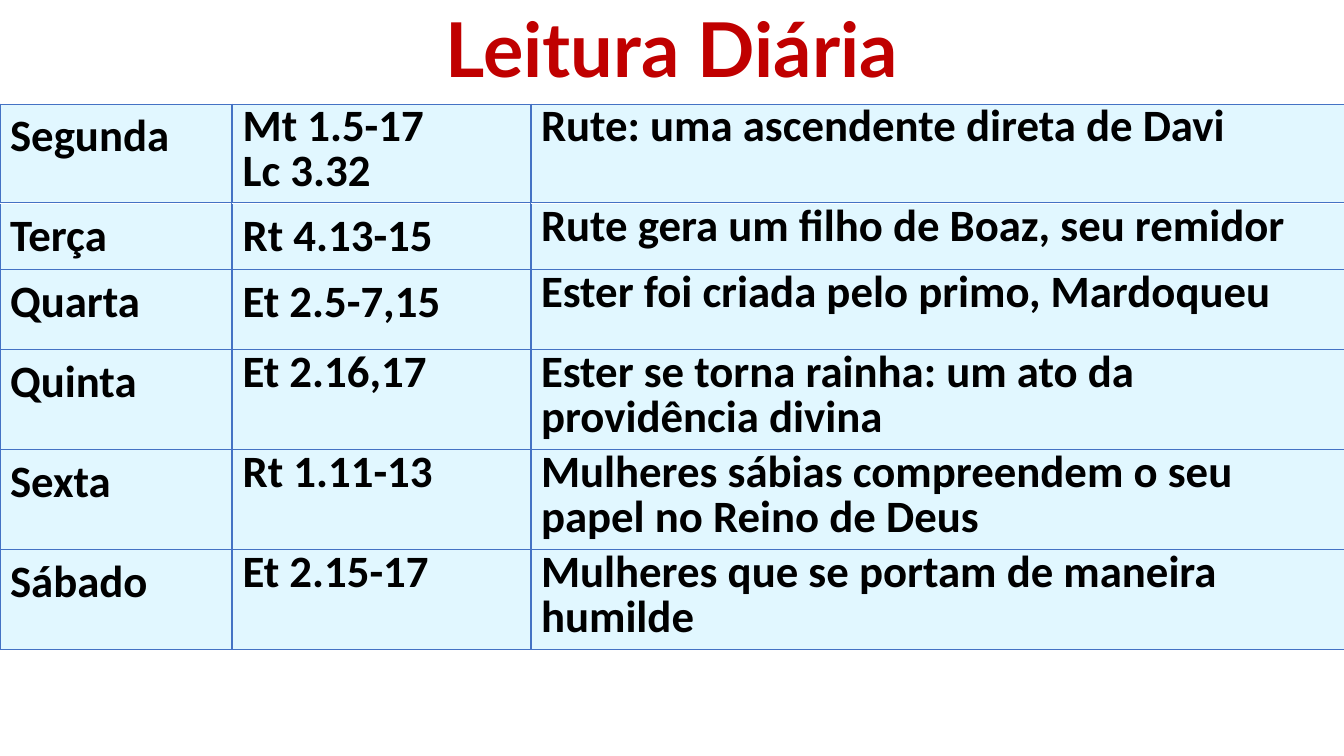
from dataclasses import dataclass

from lxml.etree import SubElement
from pptx import Presentation
from pptx.dml.color import RGBColor
from pptx.enum.shapes import MSO_CONNECTOR
from pptx.enum.text import MSO_ANCHOR, PP_ALIGN
from pptx.oxml.ns import qn
from pptx.util import Cm, Pt

WHITE, BLACK, RED = "FFFFFF", "000000", "C00000"
BLUE, PALE_BLUE = "4472C4", "E1F7FF"
SLIDE_WIDTH, SLIDE_HEIGHT = 33.87, 19.05
TABLE_TOP = 2.62
COLUMN_WIDTHS = (5.86, 7.52, 20.49)


@dataclass
class Reading:
    day: str
    passage: str
    theme: str
    height: float
    tight_passage: bool = True  # passage set with 32 pt line spacing


@dataclass
class Rule:
    x1: float
    y1: float
    x2: float
    y2: float


READINGS = [
    Reading("Segunda", "Mt 1.5-17\nLc 3.32", "Rute: uma ascendente direta de Davi", 2.5),
    Reading("Terça", "Rt 4.13-15", "Rute gera um filho de Boaz, seu remidor", 1.66, False),
    Reading("Quarta", "Et 2.5-7,15", "Ester foi criada pelo primo, Mardoqueu", 2.02, False),
    Reading("Quinta", "Et 2.16,17", "Ester se torna rainha: um ato da providência divina", 2.52),
    Reading("Sexta", "Rt 1.11-13", "Mulheres sábias compreendem o seu papel no Reino de Deus", 2.52),
    Reading("Sábado", "Et 2.15-17", "Mulheres que se portam de maneira humilde", 2.52),
]
TABLE_HEIGHT = sum(reading.height for reading in READINGS)


def rgb(color: str) -> RGBColor:
    return RGBColor.from_string(color)


def style_text(frame, font: str, size: float, color: str) -> None:
    for paragraph in frame.paragraphs:
        for run in paragraph.runs:
            run.font.name = font
            run.font.size = Pt(size)
            run.font.bold = True
            run.font.color.rgb = rgb(color)


def add_title(slide, text: str) -> None:
    title = slide.shapes.add_textbox(Cm(0), Cm(0.1), Cm(SLIDE_WIDTH), Cm(2.18))
    frame = title.text_frame
    frame.word_wrap = True
    frame.vertical_anchor = MSO_ANCHOR.TOP
    frame.margin_top = frame.margin_bottom = Cm(0.2)
    frame.text = text
    frame.paragraphs[0].alignment = PP_ALIGN.CENTER
    frame.paragraphs[0].line_spacing = 0.9
    style_text(frame, "Lato", 54, RED)


def set_border(cell, side: str, color: str, width: float) -> None:
    properties = cell._tc.get_or_add_tcPr()
    border = SubElement(properties, qn(f"a:ln{side}"), w=str(Pt(width)))
    fill = SubElement(border, qn("a:solidFill"))
    SubElement(fill, qn("a:srgbClr"), val=color)


def fill_cell(cell, text: str, tight: bool, row: int) -> None:
    cell.text_frame.text = text
    style_text(cell.text_frame, "Calibri", 32, BLACK)
    if tight:
        for paragraph in cell.text_frame.paragraphs:
            paragraph.line_spacing = Pt(32)
    # Borders precede the fill; a white line parts the first two rows
    for side in "LRTB":
        if (row, side) in ((0, "B"), (1, "T")):
            set_border(cell, side, WHITE, 1)
        else:
            set_border(cell, side, BLUE, 0.5)
    cell.fill.solid()
    cell.fill.fore_color.rgb = rgb(PALE_BLUE)


def add_readings(slide, readings: list[Reading]) -> None:
    table = slide.shapes.add_table(
        len(readings), len(COLUMN_WIDTHS),
        Cm(0), Cm(TABLE_TOP), Cm(SLIDE_WIDTH), Cm(TABLE_HEIGHT),
    ).table
    table.first_row = table.horz_banding = False
    for column, width in zip(table.columns, COLUMN_WIDTHS):
        column.width = Cm(width)
    for row, reading in enumerate(readings):
        table.rows[row].height = Cm(reading.height)
        fill_cell(table.cell(row, 0), reading.day, False, row)
        fill_cell(table.cell(row, 1), reading.passage, reading.tight_passage, row)
        fill_cell(table.cell(row, 2), reading.theme, True, row)


def add_rule(slide, rule: Rule) -> None:
    line = slide.shapes.add_connector(
        MSO_CONNECTOR.STRAIGHT, Cm(rule.x1), Cm(rule.y1), Cm(rule.x2), Cm(rule.y2)
    )
    line.line.color.rgb = rgb(BLUE)
    line.line.width = Pt(0.5)
    SubElement(line._element.spPr, qn("a:effectLst"))


def main() -> None:
    presentation = Presentation()
    presentation.slide_width = Cm(SLIDE_WIDTH)
    presentation.slide_height = Cm(SLIDE_HEIGHT)
    slide = presentation.slides.add_slide(presentation.slide_layouts[6])

    # Heading and weekly readings
    add_title(slide, "Leitura Diária")
    add_readings(slide, READINGS)

    # Rules under the first row and beside the column edges
    first_row_bottom = TABLE_TOP + READINGS[0].height - 0.02
    add_rule(slide, Rule(SLIDE_WIDTH, first_row_bottom, 0, first_row_bottom))
    for x in (5.84, 13.36):
        add_rule(slide, Rule(x, TABLE_TOP + TABLE_HEIGHT, x, TABLE_TOP))

    presentation.save("out.pptx")


if __name__ == "__main__":
    main()
